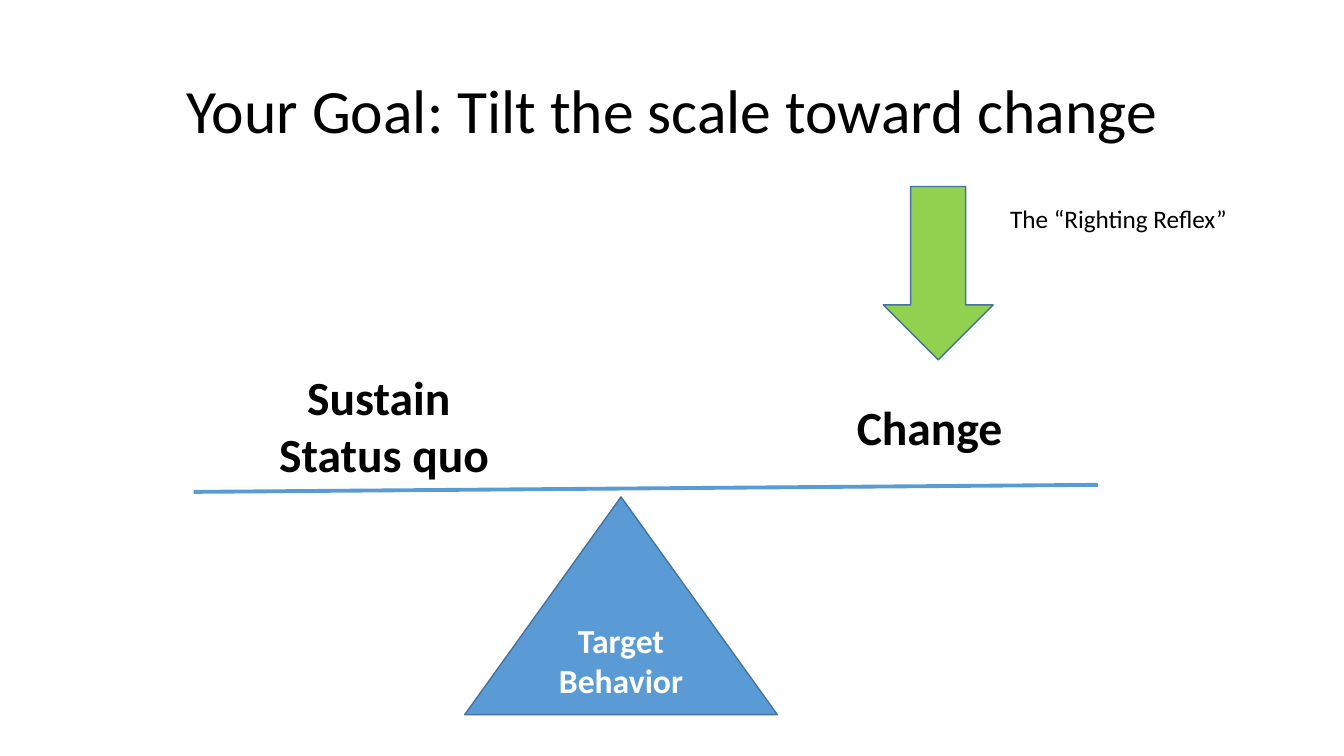
from lxml import etree
from pptx import Presentation
from pptx.dml.color import RGBColor
from pptx.enum.shapes import MSO_CONNECTOR, MSO_SHAPE
from pptx.enum.text import MSO_ANCHOR, MSO_AUTO_SIZE, PP_ALIGN
from pptx.oxml.ns import qn
from pptx.util import Inches, Pt

COLORS = {"text": "000000", "light": "FFFFFF", "blue": "5B9BD5",
          "outline": "43739E", "green": "92D050"}


def rgb(name):
    return RGBColor.from_string(COLORS[name])


class SlideBuilder:
    font = "Calibri"

    def __init__(self, slide):
        self.slide = slide

    def set_text(self, tf, lines, size, color="text", bold=False, align=PP_ALIGN.CENTER):
        tf.word_wrap = True
        for i, line in enumerate(lines):
            p = tf.add_paragraph() if i else tf.paragraphs[0]
            p.text = line
            p.alignment = align
            p.font.name = self.font
            p.font.size = Pt(size)
            p.font.bold = bold
            p.font.color.rgb = rgb(color)

    def title(self, text, box):
        sp = self.slide.shapes.title
        sp.left, sp.top, sp.width, sp.height = map(Inches, box)
        tf = sp.text_frame
        self.set_text(tf, [text], 44)
        tf.auto_size = MSO_AUTO_SIZE.NONE
        tf.vertical_anchor = MSO_ANCHOR.MIDDLE
        tf.paragraphs[0].line_spacing = 0.9

    def label(self, lines, box, size, **style):
        sp = self.slide.shapes.add_textbox(*map(Inches, box))
        self.set_text(sp.text_frame, lines, size, **style)
        sp.text_frame.auto_size = MSO_AUTO_SIZE.SHAPE_TO_FIT_TEXT

    def shape(self, kind, box, fill):
        sp = self.slide.shapes.add_shape(kind, *map(Inches, box))
        sp.shadow.inherit = False
        sp.fill.solid()
        sp.fill.fore_color.rgb = rgb(fill)
        sp.line.color.rgb = rgb("outline")
        sp.line.width = Pt(1)
        return sp

    def line(self, start, end, color, width):
        cx = self.slide.shapes.add_connector(
            MSO_CONNECTOR.STRAIGHT, *map(Inches, start + end))
        cx.line.color.rgb = rgb(color)
        cx.line.width = Pt(width)
        etree.SubElement(cx._element.spPr, qn("a:effectLst"))


def main():
    prs = Presentation()
    prs.slide_width, prs.slide_height = Inches(13.33), Inches(7.5)
    s = SlideBuilder(prs.slides.add_slide(prs.slide_layouts[5]))

    s.title("Your Goal: Tilt the scale toward change", (0.92, 0.4, 11.5, 1.45))
    s.label(["Change"], (7.71, 3.9, 3.02, 0.67), 34, bold=True)
    s.label(["Sustain ", "Status quo"], (2.3, 3.6, 3.02, 1.25), 34, bold=True)

    fulcrum = s.shape(MSO_SHAPE.ISOSCELES_TRIANGLE, (4.61, 4.93, 3.1, 2.16), "blue")
    fulcrum.text_frame.vertical_anchor = MSO_ANCHOR.MIDDLE
    s.set_text(fulcrum.text_frame, ["Target Behavior"], 24, color="light", bold=True)

    s.line((1.92, 4.88), (10.89, 4.81), "blue", 2.75)
    s.shape(MSO_SHAPE.DOWN_ARROW, (8.76, 1.85, 1.09, 1.72), "green")
    s.label(["The “Righting Reflex”"], (9.92, 1.97, 2.49, 0.4), 18, align=PP_ALIGN.LEFT)

    prs.save("out.pptx")


if __name__ == "__main__":
    main()
